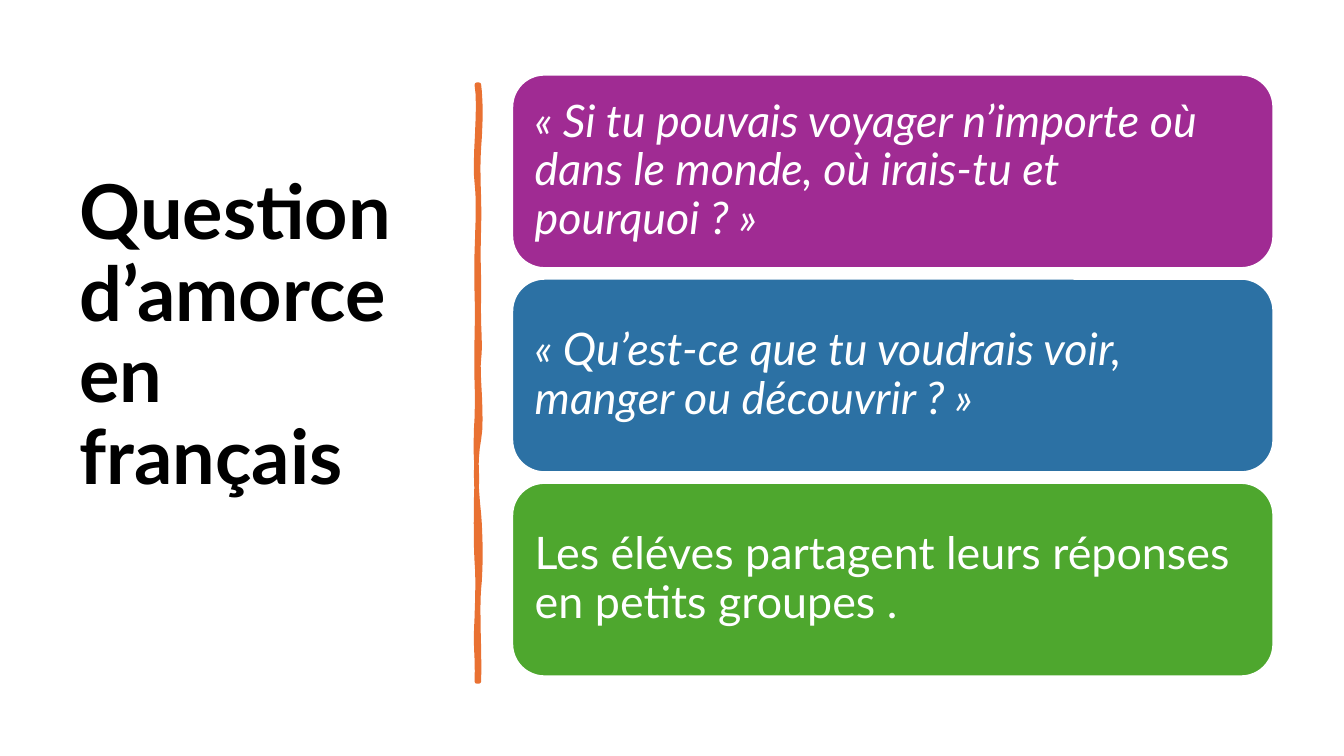
from pptx import Presentation
from pptx.dml.color import RGBColor
from pptx.enum.shapes import MSO_SHAPE
from pptx.enum.text import MSO_ANCHOR, PP_ALIGN
from pptx.util import Inches, Pt

BLACK = RGBColor(0x00, 0x00, 0x00)
WHITE = RGBColor(0xFF, 0xFF, 0xFF)
ORANGE = RGBColor(0xE9, 0x71, 0x32)
PURPLE = RGBColor(0xA0, 0x2B, 0x93)
BLUE = RGBColor(0x2C, 0x71, 0xA4)
GREEN = RGBColor(0x4E, 0xA7, 0x2E)

CARD_LEFT, CARD_TOP = 5.08, 0.74
CARD_WIDTH, CARD_HEIGHT = 7.55, 1.92
CARD_PITCH = CARD_HEIGHT + 0.105
CARD_INSET = Inches(0.13)
UNITS_PER_INCH = 1000
CURVE_STEPS = 8


def write_text(frame, text, size, color, bold=False, italic=False):
    frame.word_wrap = True
    frame.vertical_anchor = MSO_ANCHOR.MIDDLE
    paragraph = frame.paragraphs[0]
    paragraph.alignment = PP_ALIGN.LEFT
    paragraph.line_spacing = 0.9
    run = paragraph.add_run()
    run.text = text
    run.font.name = "Lato"
    run.font.size = Pt(size)
    run.font.bold = bold
    run.font.italic = italic
    run.font.color.rgb = color


def curve_points(start, controls):
    """Sample one cubic Bézier curve, in freeform units."""
    knots = [start, *controls]
    points = []
    for step in range(1, CURVE_STEPS + 1):
        t = step / CURVE_STEPS
        weights = ((1 - t) ** 3, 3 * t * (1 - t) ** 2, 3 * t * t * (1 - t), t ** 3)
        points.append(tuple(
            UNITS_PER_INCH * sum(w * knot[axis] for w, knot in zip(weights, knots))
            for axis in (0, 1)))
    return points


presentation = Presentation()
presentation.slide_width = Inches(13.33)
presentation.slide_height = Inches(7.5)
slide = presentation.slides.add_slide(presentation.slide_layouts[6])

# Title, raised by one line through the bottom inset
title = slide.shapes.add_textbox(Inches(0.69), Inches(0.7), Inches(3.74), Inches(6.11))
title.text_frame.margin_bottom = Inches(0.86)
write_text(title.text_frame, "Question d’amorce en français", 54, BLACK, bold=True)

# Hand-drawn divider: each edge as (first control y, second control x and y, end y)
RIGHT_X, LEFT_X, TOP_Y, BOTTOM_Y = 4.75, 4.73, 0.84, 6.76
edges = (
    (RIGHT_X, TOP_Y, (
        (4.77, 1.02, 4.77, 1.19, 1.46), (4.73, 1.73, 4.76, 1.95, 2.26),
        (4.74, 2.57, 4.75, 2.62, 2.94), (4.74, 3.25, 4.77, 3.42, 3.56),
        (4.73, 3.7, 4.79, 4.14, 4.36), (4.71, 4.57, 4.72, 4.84, 5.1),
        (4.77, 5.36, 4.77, 5.64, 5.84), (4.73, 6.03, 4.76, 6.5, 6.76))),
    (LEFT_X, BOTTOM_Y, (
        (4.74, 6.46, 4.71, 6.44, 6.13), (4.74, 5.83, 4.74, 5.7, 5.57),
        (4.72, 5.44, 4.72, 4.95, 4.77), (4.73, 4.59, 4.71, 4.45, 4.15),
        (4.74, 3.86, 4.72, 3.73, 3.35), (4.74, 2.98, 4.72, 2.81, 2.5),
        (4.74, 2.18, 4.75, 2.0, 1.81), (4.7, 1.63, 4.77, 1.04, 0.84))),
)
outline = []
for edge_x, edge_y, curves in edges:
    outline.append((edge_x * UNITS_PER_INCH, edge_y * UNITS_PER_INCH))
    for x1, y1, x2, y2, end_y in curves:
        outline += curve_points((edge_x, edge_y), ((x1, y1), (x2, y2), (edge_x, end_y)))
        edge_y = end_y
builder = slide.shapes.build_freeform(*outline[0], scale=Inches(1) / UNITS_PER_INCH)
builder.add_line_segments(outline[1:], close=True)
divider = builder.convert_to_shape()
divider.shadow.inherit = False
divider.fill.solid()
divider.fill.fore_color.rgb = ORANGE
divider.line.color.rgb = ORANGE
divider.line.width = Pt(3.25)

# Question cards
cards = (
    (PURPLE, True, "« Si tu pouvais voyager n’importe où dans le monde, où irais‑tu et pourquoi ? »"),
    (BLUE, True, "« Qu’est‑ce que tu voudrais voir, manger ou découvrir ? »"),
    (GREEN, False, "Les éléves partagent leurs réponses en petits groupes ."),
)
for row, (color, italic, text) in enumerate(cards):
    card = slide.shapes.add_shape(
        MSO_SHAPE.ROUNDED_RECTANGLE, Inches(CARD_LEFT), Inches(CARD_TOP + row * CARD_PITCH),
        Inches(CARD_WIDTH), Inches(CARD_HEIGHT))
    card.shadow.inherit = False
    card.fill.solid()
    card.fill.fore_color.rgb = color
    card.line.color.rgb = WHITE
    card.line.width = Pt(1.5)
    frame = card.text_frame
    frame.margin_left = frame.margin_right = CARD_INSET
    frame.margin_top = frame.margin_bottom = CARD_INSET
    write_text(frame, text, 32, WHITE, italic=italic)

presentation.save("out.pptx")
